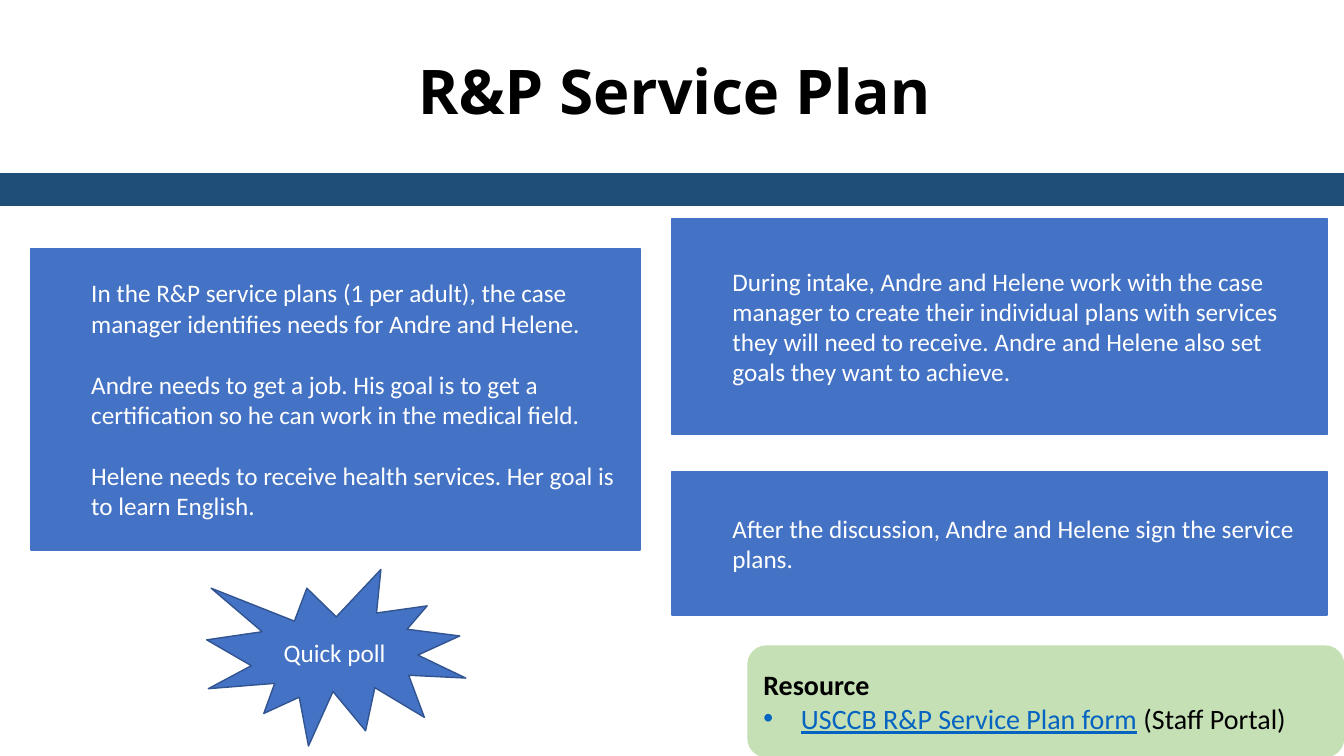
from pptx import Presentation
from pptx.dml.color import RGBColor
from pptx.enum.shapes import MSO_SHAPE
from pptx.enum.text import MSO_ANCHOR, MSO_AUTO_SIZE, PP_ALIGN
from pptx.oxml.ns import qn
from pptx.util import Cm, Pt
from lxml import etree

RECTANGLE = MSO_SHAPE.RECTANGLE
ROUNDED_PANEL = MSO_SHAPE.FLOWCHART_ALTERNATE_PROCESS
BURST = MSO_SHAPE.EXPLOSION1
MIDDLE = MSO_ANCHOR.MIDDLE
LEFT, CENTER = PP_ALIGN.LEFT, PP_ALIGN.CENTER

BLACK = RGBColor(0x00, 0x00, 0x00)
WHITE = RGBColor(0xFF, 0xFF, 0xFF)
NAVY = RGBColor(0x1F, 0x4E, 0x79)
BLUE = RGBColor(0x44, 0x72, 0xC4)
BURST_EDGE = RGBColor(0x32, 0x54, 0x91)
GREEN = RGBColor(0xC5, 0xE0, 0xB4)
LINK_BLUE = RGBColor(0x05, 0x63, 0xC1)

TITLE_FORMAT = {"name": "Open Sans", "size": Pt(44), "bold": True}
BODY_FORMAT = {"name": "Calibri", "size": Pt(18)}
HEADING_FORMAT = {"name": "Calibri", "size": Pt(20), "bold": True}
RESOURCE_FORMAT = {"name": "Calibri", "size": Pt(20), "bold": False}
LINK_FORMAT = RESOURCE_FORMAT | {"underline": True}

SLIDE_WIDTH = Cm(33.87)
RIGHT_COLUMN, RIGHT_WIDTH = Cm(16.94), Cm(16.5)
STEP_INDENT = Cm(1.27)
STEP_GAP = Pt(22)

# Each step: left, top, width, height, paragraphs
STEPS = [
    (RIGHT_COLUMN, Cm(5.5), RIGHT_WIDTH, Cm(5.45), [
        "During intake, Andre and Helene work with the case manager to create "
        "their individual plans with services they will need to receive. "
        "Andre and Helene also set goals they want to achieve."]),
    (Cm(0.78), Cm(6.26), Cm(15.35), Cm(7.6), [
        "In the R&P service plans (1 per adult), the case manager identifies "
        "needs for Andre and Helene.",
        "Andre needs to get a job. His goal is to get a certification so he "
        "can work in the medical field.",
        "Helene needs to receive health services. Her goal is to learn English."]),
    (RIGHT_COLUMN, Cm(11.88), RIGHT_WIDTH, Cm(3.62), [
        "After the discussion, Andre and Helene sign the service plans."]),
]


def add_run(paragraph, text, text_format, color):
    run = paragraph.add_run()
    run.text = text
    for attribute, value in text_format.items():
        setattr(run.font, attribute, value)
    run.font.color.rgb = color


def add_panel(slide, preset, left, top, width, height, fill, edge):
    panel = slide.shapes.add_shape(preset, left, top, width, height)
    panel.shadow.inherit = False
    panel.fill.solid()
    panel.fill.fore_color.rgb = fill
    panel.line.color.rgb = edge
    panel.line.width = Pt(1)
    panel.text_frame.word_wrap = True
    panel.text_frame.vertical_anchor = MIDDLE
    return panel


def set_indent(paragraph, margin, first_line=0, bullet=None):
    properties = paragraph._p.get_or_add_pPr()
    properties.set("marL", str(margin))
    properties.set("indent", str(first_line))
    if bullet:
        etree.SubElement(properties, qn("a:buFont")).set("typeface", "Arial")
        etree.SubElement(properties, qn("a:buChar")).set("char", bullet)


def add_title(slide, text):
    title = slide.shapes.title
    title.left, title.top, title.width, title.height = Cm(1.47), Cm(1.19), Cm(31.06), Cm(2.13)
    frame = title.text_frame
    frame.auto_size = MSO_AUTO_SIZE.NONE
    frame.vertical_anchor = MIDDLE
    heading = frame.paragraphs[0]
    heading.alignment = CENTER
    add_run(heading, text, TITLE_FORMAT, BLACK)


def add_step(slide, left, top, width, height, sentences):
    frame = add_panel(slide, RECTANGLE, left, top, width, height, BLUE, BLUE).text_frame
    for index, sentence in enumerate(sentences):
        paragraph = frame.add_paragraph() if index else frame.paragraphs[0]
        paragraph.level = 1
        paragraph.alignment = LEFT
        if index:
            paragraph.space_before = STEP_GAP
        set_indent(paragraph, STEP_INDENT)
        add_run(paragraph, sentence, BODY_FORMAT, WHITE)


def add_resource(slide):
    frame = add_panel(slide, ROUNDED_PANEL, Cm(18.85), Cm(16.28), Cm(15.01), Cm(2.79),
                      GREEN, GREEN).text_frame
    heading, form = frame.paragraphs[0], frame.add_paragraph()
    heading.alignment = form.alignment = LEFT
    add_run(heading, "Resource", HEADING_FORMAT, BLACK)
    set_indent(form, Cm(0.95), -Cm(0.95), "•")
    add_run(form, "USCCB R&P Service Plan form", LINK_FORMAT, LINK_BLUE)
    add_run(form, " (Staff Portal)", RESOURCE_FORMAT, BLACK)


def add_poll(slide):
    burst = add_panel(slide, BURST, Cm(5.21), Cm(14.35), Cm(6.53), Cm(4.45), BLUE, BURST_EDGE)
    label = burst.text_frame.paragraphs[0]
    label.alignment = CENTER
    add_run(label, "Quick poll", BODY_FORMAT, WHITE)


def main():
    presentation = Presentation()
    presentation.slide_width, presentation.slide_height = SLIDE_WIDTH, Cm(19.05)
    slide = presentation.slides.add_slide(presentation.slide_layouts[5])

    # Header
    add_title(slide, "R&P Service Plan")
    add_panel(slide, RECTANGLE, 0, Cm(4.39), SLIDE_WIDTH, Cm(0.79), NAVY, NAVY)

    # Resource, steps and poll
    add_resource(slide)
    for step in STEPS:
        add_step(slide, *step)
    add_poll(slide)

    presentation.save("out.pptx")


if __name__ == "__main__":
    main()
